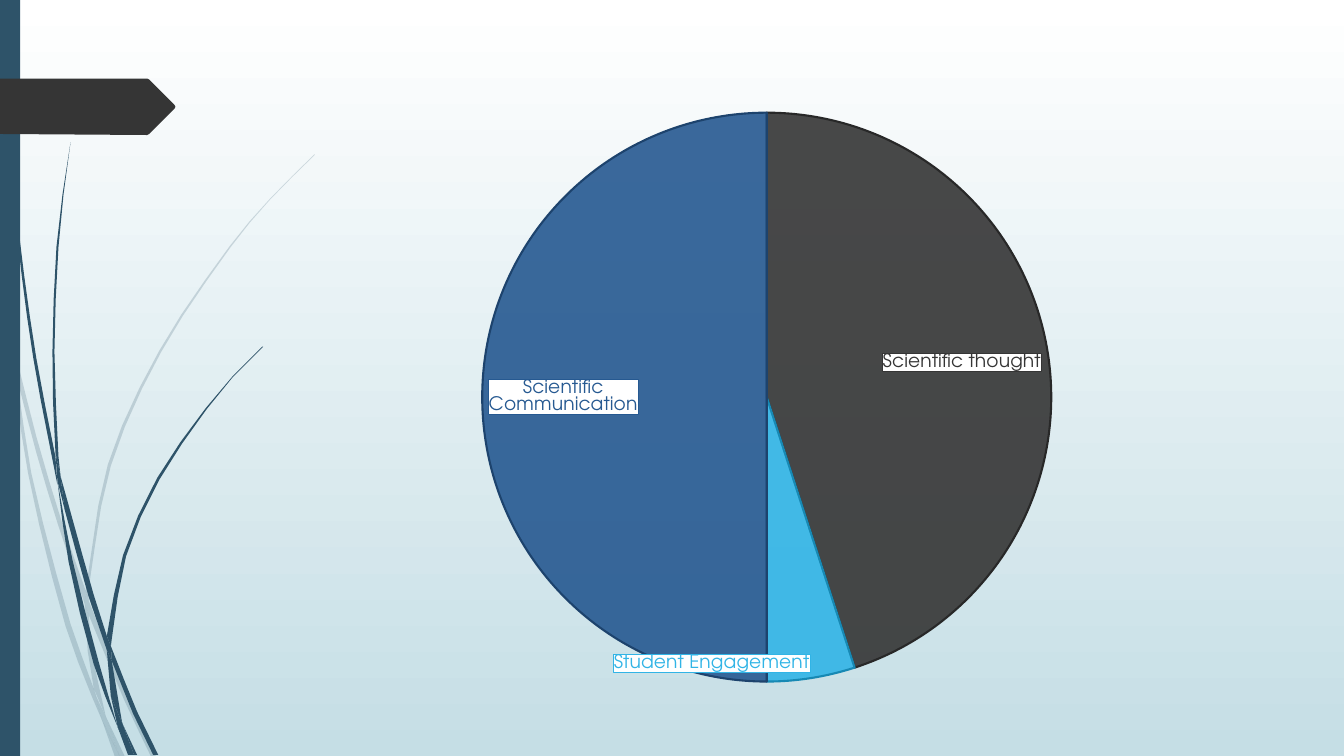
from dataclasses import dataclass
from math import ceil, dist

from lxml.etree import SubElement
from pptx import Presentation
from pptx.chart.data import CategoryChartData
from pptx.dml.color import RGBColor
from pptx.enum.chart import XL_CHART_TYPE, XL_LABEL_POSITION
from pptx.enum.shapes import MSO_SHAPE
from pptx.oxml import parse_xml
from pptx.oxml.ns import nsdecls, qn
from pptx.util import Pt

PX = 9144
WIDTH, HEIGHT = 1333, 750
LONGEST_STEP = 60


@dataclass(frozen=True)
class Theme:
    font: str = "TeX Gyre Adventor"
    label_size: float = 13.3
    slice_line: float = 1.5
    label_line: float = 0.75
    top: str = "FFFFFF"
    bottom: str = "C5DEE5"
    grass: str = "2E5369"
    marker: str = "353535"
    label_fill: str = "FFFFFF"
    pale: int = 20
    slice_opacity: int = 90


THEME = Theme()

SLICES = [
    ("Scientific thought", 45, "353535", "282828"),
    ("Student Engagement", 5, "31B4E6", "1789B4"),
    ("Scientific Communication", 50, "265991", "1D436D"),
]

PALE_BLADES = [
    ([(11, 350), (9, 322), (0, 282)], [(0, 299), (10, 344)]),
    ([(14, 345), (36, 433), (62, 520), (85, 586)],
     [(84, 599), (58, 522), (36, 449), (17, 376)]),
    ([(88, 596), (127, 692), (155, 751)], [(150, 751), (123, 694), (88, 610)]),
    ([(105, 711), (124, 751)], [(119, 751)]),
    ([(11, 350), (17, 376), (31, 469), (70, 619), (93, 683), (101, 714)],
     [(101, 714), (92, 693), (65, 621), (28, 470), (11, 350)]),
    ([(84, 599), (87, 646), (93, 683), (105, 711)],
     [(105, 711), (91, 646), (88, 610)]),
    ([(312, 153), (268, 197), (228, 244), (158, 348), (107, 461), (85, 586)],
     [(88, 596), (88, 584), (110, 462), (160, 349), (229, 245), (268, 198),
      (312, 154)]),
    ([(101, 714), (114, 751)], [(119, 751)]),
    ([(85, 586), (84, 599), (88, 610)], [(88, 596)]),
    ([(93, 683), (101, 714), (119, 751)], [(105, 711), (96, 692)]),
]

DARK_BLADES = [
    ([(3, 0), (7, 110), (17, 233), (33, 355), (57, 481)],
     [(55, 453), (36, 355), (19, 232), (8, 109), (4, 0)]),
    ([(60, 472), (93, 590), (106, 631)], [(106, 645), (88, 592), (64, 505)]),
    ([(110, 641), (136, 706), (157, 749)], [(152, 749), (132, 708), (111, 656)]),
    ([(57, 477), (72, 556), (98, 657), (117, 722)],
     [(117, 722), (93, 659), (68, 557), (57, 477)]),
    ([(70, 141), (62, 193), (56, 245), (52, 349), (55, 449), (60, 472)],
     [(58, 453), (54, 349), (58, 245), (63, 193), (70, 141)]),
    ([(122, 719), (136, 749)], [(133, 749)]),
    ([(55, 449), (57, 477), (64, 505)], [(60, 472)]),
    ([(260, 344), (231, 373), (204, 405), (156, 474), (122, 551), (106, 631)],
     [(110, 641), (111, 633), (125, 552), (158, 476), (205, 406), (231, 374),
      (261, 344)]),
    ([(117, 722), (131, 749)], [(127, 749)]),
    ([(106, 645), (110, 691), (122, 719)], [(121, 716), (111, 656)]),
    ([(106, 631), (106, 645), (111, 656)], [(110, 641)]),
    ([(110, 691), (117, 722), (130, 749)], [(133, 749), (122, 719)]),
]

MARKER = [(0, 78), (146, 78), (148, 79), (173, 104), (174, 106),
          (173, 108), (148, 133), (146, 134), (0, 133)]


def solid(fill, color, opacity=100):
    fill.solid()
    fill.fore_color.rgb = RGBColor.from_string(color)
    if opacity < 100:
        color_element = fill._xPr.find(qn("a:solidFill"))[0]
        SubElement(color_element, qn("a:alpha")).set("val", str(opacity * 1000))


def flat(shape, color, opacity=100):
    shape.shadow.inherit = False
    shape.line.fill.background()
    solid(shape.fill, color, opacity)


def smooth(knots):
    last = len(knots) - 1
    if last < 2:
        return knots
    slopes = []
    for index in range(len(knots)):
        before, after = max(index - 1, 0), min(index + 1, last)
        length = sum(dist(knots[i], knots[i + 1]) for i in range(before, after))
        slopes.append([(b - a) / length for a, b in zip(knots[before], knots[after])])
    points = [knots[0]]
    for index in range(last):
        start, end = knots[index], knots[index + 1]
        chord = dist(start, end)
        steps = ceil(chord / LONGEST_STEP)
        for step in range(1, steps + 1):
            t = step / steps
            blend = 3 * t**2 - 2 * t**3
            leave = (t - 2 * t**2 + t**3) * chord
            arrive = (t**3 - t**2) * chord
            points.append(tuple(
                start[axis] + blend * (end[axis] - start[axis])
                + leave * slopes[index][axis] + arrive * slopes[index + 1][axis]
                for axis in (0, 1)))
    return points


def add_outline(shapes, points, color, opacity=100):
    scaled = [(round(x * PX), round(y * PX)) for x, y in points]
    builder = shapes.build_freeform(*scaled[0])
    builder.add_line_segments(scaled[1:], close=True)
    flat(builder.convert_to_shape(), color, opacity)


def add_grass(slide, blades, opacity=100):
    group = slide.shapes.add_group_shape()
    for near_edge, far_edge in blades:
        outline = smooth(near_edge) + smooth(far_edge)
        add_outline(group.shapes, outline, THEME.grass, opacity)


def add_background(slide):
    fill = slide.background.fill
    fill.gradient()
    fill.gradient_angle = 270
    for stop, color in zip(fill.gradient_stops, (THEME.top, THEME.bottom)):
        stop.color.rgb = RGBColor.from_string(color)


def style_line(line, color, width):
    solid(line.fill, color)
    line.width = Pt(width)


def style_font(font, color):
    font.name = THEME.font
    font.size = Pt(THEME.label_size)
    font.color.rgb = RGBColor.from_string(color)


def box_label(label, color):
    style_font(label.font, color)
    label.position = XL_LABEL_POSITION.INSIDE_END
    element = label._get_or_add_dLbl()
    for name, shown in (("c:showVal", "0"), ("c:showCatName", "1"), ("c:showPercent", "0")):
        element.find(qn(name)).set("val", shown)
    for old in element.findall(qn("c:spPr")):
        element.remove(old)
    element.find(qn("c:txPr")).addprevious(parse_xml(
        f'<c:spPr {nsdecls("c", "a")}>'
        f'<a:solidFill><a:srgbClr val="{THEME.label_fill}"/></a:solidFill>'
        f'<a:ln w="{int(Pt(THEME.label_line))}"><a:solidFill><a:srgbClr val="{color}"/>'
        '</a:solidFill></a:ln></c:spPr>'))


def add_pie(slide, left, top, width, height):
    data = CategoryChartData()
    data.categories = [name for name, *_ in SLICES]
    data.add_series("Series 1", [value for _, value, *_ in SLICES])
    frame = slide.shapes.add_chart(
        XL_CHART_TYPE.PIE, left * PX, top * PX, width * PX, height * PX, data)
    chart = frame.chart
    chart.has_legend = False
    chart.has_title = False
    style_font(chart.font, THEME.marker)
    plot = chart.plots[0]
    plot.vary_by_categories = True
    for index, (_, _, color, edge) in enumerate(SLICES):
        point = plot.series[0].points[index]
        solid(point.format.fill, color, THEME.slice_opacity)
        style_line(point.format.line, edge, THEME.slice_line)
        box_label(point.data_label, color)


def main():
    presentation = Presentation()
    presentation.slide_width = WIDTH * PX
    presentation.slide_height = HEIGHT * PX
    slide = presentation.slides.add_slide(presentation.slide_layouts[6])
    add_background(slide)
    add_grass(slide, PALE_BLADES, THEME.pale)
    add_grass(slide, DARK_BLADES)
    side_bar = slide.shapes.add_shape(MSO_SHAPE.RECTANGLE, 0, 0, 20 * PX, HEIGHT * PX)
    flat(side_bar, THEME.grass)
    add_outline(slide.shapes, MARKER, THEME.marker)
    add_pie(slide, 251, 98, 1019, 592)
    presentation.save("out.pptx")


if __name__ == "__main__":
    main()
